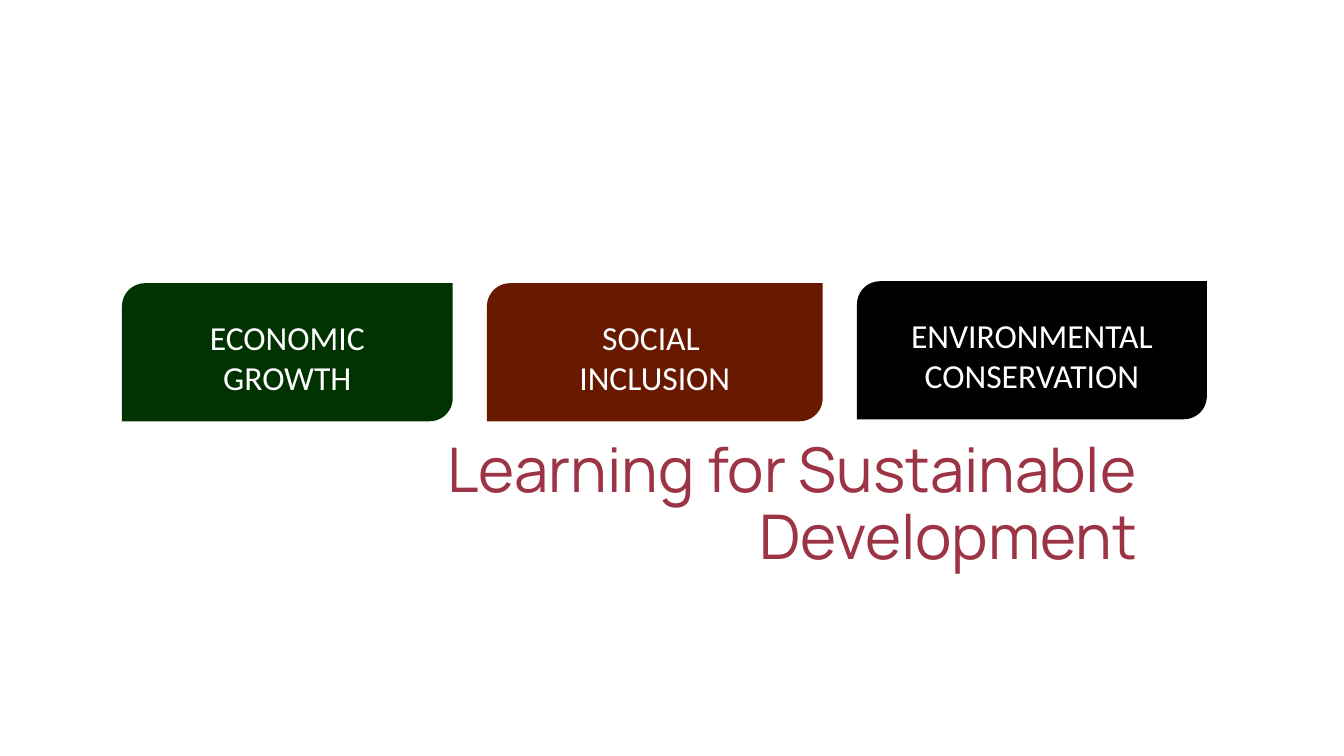
from dataclasses import dataclass

from pptx import Presentation
from pptx.dml.color import RGBColor
from pptx.enum.shapes import MSO_SHAPE
from pptx.enum.text import MSO_ANCHOR, MSO_AUTO_SIZE, PP_ALIGN
from pptx.util import Inches, Pt


@dataclass(frozen=True)
class Theme:
    title_color: str = "9C3445"
    label_color: str = "FFFFFF"
    economic: str = "003300"
    social: str = "681900"
    environmental: str = "000000"
    title_font: str = "Manrope"
    label_font: str = "Calibri"
    title_size: int = 44
    label_size: int = 24


THEME = Theme()
SLIDE_WIDTH, SLIDE_HEIGHT = 13.33, 7.5
PILLAR_GAP = 0.34
PILLARS = [
    ("ECONOMIC\nGROWTH", THEME.economic, 3.28, 0),
    ("SOCIAL \vINCLUSION", THEME.social, 3.33, 0),
    ("ENVIRONMENTAL CONSERVATION", THEME.environmental, 3.47, 0.02),
]


def write_text(shape, text, *, font, size, color, align, top_inset=0.05, line_spacing=None):
    frame = shape.text_frame
    frame.text = text
    frame.word_wrap = True
    frame.auto_size = MSO_AUTO_SIZE.NONE
    frame.vertical_anchor = MSO_ANCHOR.MIDDLE
    frame.margin_top = Inches(top_inset)
    frame.margin_bottom = Inches(top_inset / 2)
    for paragraph in frame.paragraphs:
        paragraph.alignment = align
        paragraph.line_spacing = line_spacing
        for run in paragraph.runs:
            run.font.name = font
            run.font.size = Pt(size)
            run.font.color.rgb = RGBColor.from_string(color)


def place_title(slide, text, left, top, width, height):
    title = slide.shapes.title
    title.left, title.top = Inches(left), Inches(top)
    title.width, title.height = Inches(width), Inches(height)
    write_text(title, text, font=THEME.title_font, size=THEME.title_size,
               color=THEME.title_color, align=PP_ALIGN.RIGHT, line_spacing=0.9)


def add_pillars(slide, left, top, height):
    for label, fill, width, rise in PILLARS:
        pillar = slide.shapes.add_shape(
            MSO_SHAPE.ROUND_2_DIAG_RECTANGLE,
            Inches(left), Inches(top - rise), Inches(width), Inches(height))
        pillar.shadow.inherit = False
        pillar.fill.solid()
        pillar.fill.fore_color.rgb = RGBColor.from_string(fill)
        pillar.line.fill.background()
        write_text(pillar, label, font=THEME.label_font, size=THEME.label_size,
                   color=THEME.label_color, align=PP_ALIGN.CENTER, top_inset=0.2)
        left += width + PILLAR_GAP


def main():
    presentation = Presentation()
    presentation.slide_width = Inches(SLIDE_WIDTH)
    presentation.slide_height = Inches(SLIDE_HEIGHT)
    slide = presentation.slides.add_slide(presentation.slide_layouts[5])
    place_title(slide, "Learning for Sustainable Development", 1.55, 4.32, 9.83, 1.38)
    add_pillars(slide, 1.21, 2.81, 1.37)
    presentation.save("out.pptx")


if __name__ == "__main__":
    main()
